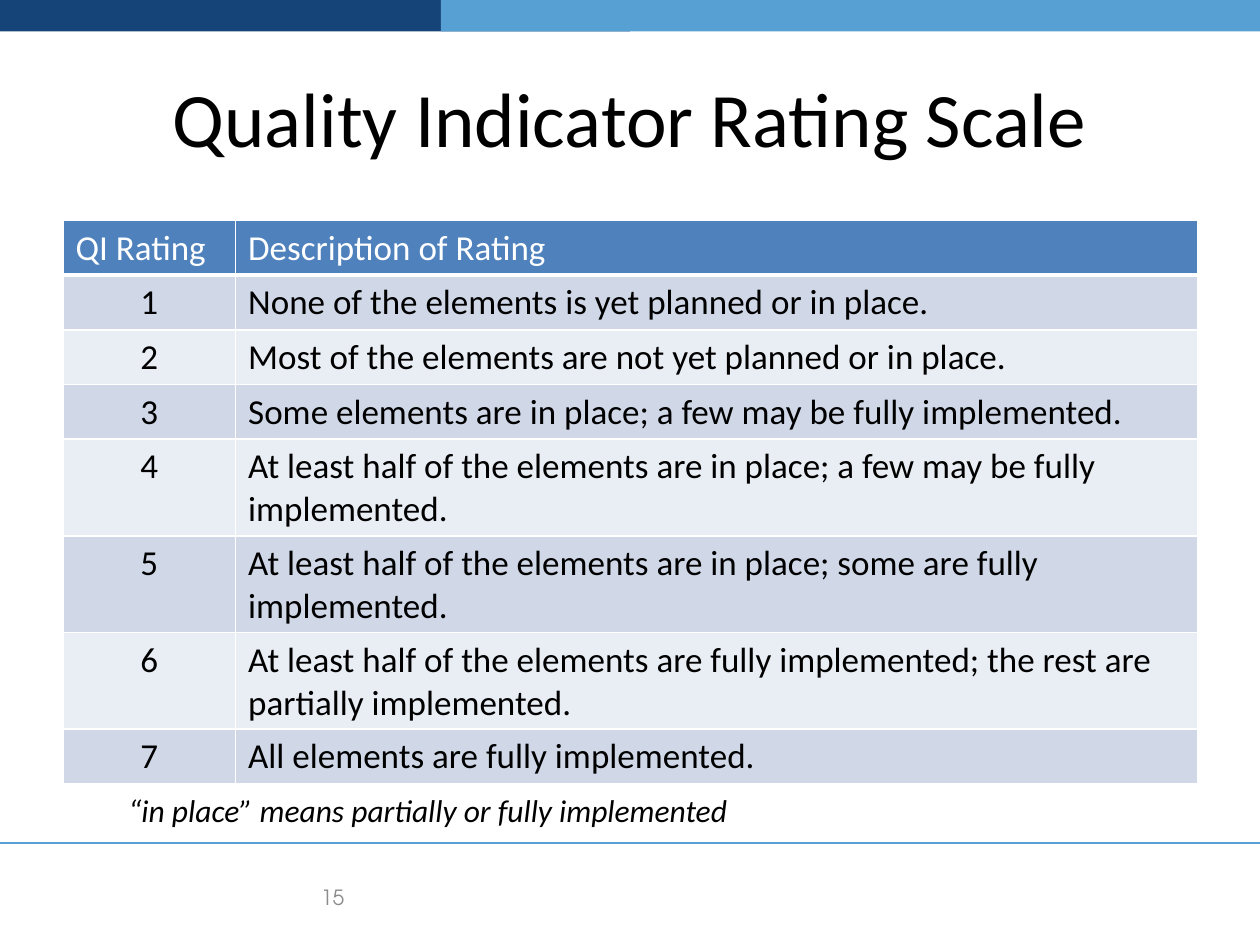
"""Build the Quality Indicator Rating Scale slide."""
import pptx
import pptx.dml.color
import pptx.enum.shapes
import pptx.enum.text
import pptx.oxml.ns
import pptx.util
from lxml import etree

Inches = pptx.util.Inches
ALIGN = pptx.enum.text.PP_ALIGN
ANCHOR = pptx.enum.text.MSO_ANCHOR

RATINGS = [
    "None of the elements is yet planned or in place.",
    "Most of the elements are not yet planned or in place.",
    "Some elements are in place; a few may be fully implemented.",
    "At least half of the elements are in place; a few may be fully implemented.",
    "At least half of the elements are in place; some are fully implemented.",
    "At least half of the elements are fully implemented; the rest are partially implemented.",
    "All elements are fully implemented.",
]
BODY = {"name": "Calibri", "size": pptx.util.Pt(20), "bold": False}
TITLE = {"name": "Calibri", "size": pptx.util.Pt(44)}
NOTE = {"name": "Calibri", "size": pptx.util.Pt(18), "italic": True}
NUMBER = {"name": "TeX Gyre Adventor", "size": pptx.util.Pt(12)}


def set_color(color_format, value):
    """Apply a hex colour to a colour format."""
    color_format.rgb = pptx.dml.color.RGBColor.from_string(value)


def write_text(frame, text, style, color="000000", align=ALIGN.LEFT):
    """Write one formatted paragraph into a text frame."""
    para = frame.paragraphs[0]
    para.alignment = align
    span = para.add_run()
    span.text = text
    for name, value in style.items():
        setattr(span.font, name, value)
    set_color(span.font.color, color)


def add_text(page, area, text, style, color="000000", align=ALIGN.LEFT,
             anchor=ANCHOR.MIDDLE, wrap=True):
    """Add a text box with one paragraph."""
    box = page.shapes.add_textbox(*map(Inches, area))
    box.text_frame.word_wrap = wrap
    box.text_frame.vertical_anchor = anchor
    write_text(box.text_frame, text, style, color, align)


def add_bar(page, area, color):
    """Add a plain rectangle without outline."""
    bar = page.shapes.add_shape(
        pptx.enum.shapes.MSO_SHAPE.RECTANGLE, *map(Inches, area))
    bar.shadow.inherit = False
    bar.fill.solid()
    set_color(bar.fill.fore_color, color)
    bar.line.fill.background()


def add_rule(page, top, color):
    """Add a horizontal line across the page."""
    rule = page.shapes.add_connector(
        pptx.enum.shapes.MSO_CONNECTOR.STRAIGHT,
        Inches(0), Inches(top), Inches(10), Inches(top))
    set_color(rule.line.color, color)
    rule.line.width = pptx.util.Pt(1.5)
    etree.SubElement(rule.element.spPr, pptx.oxml.ns.qn("a:effectLst"))


def set_borders(cell, widths, color="FFFFFF"):
    """Draw the cell borders, given widths in points by side."""
    qn = pptx.oxml.ns.qn
    properties = cell._tc.get_or_add_tcPr()
    for side, width in widths.items():
        line = etree.SubElement(properties, qn("a:ln" + side),
                                w=str(pptx.util.Pt(width)))
        fill = etree.SubElement(line, qn("a:solidFill"))
        etree.SubElement(fill, qn("a:srgbClr"), val=color)


def fill_cell(cell, text, fill, color, align, top=1, bottom=1):
    """Set the borders, fill and text of one table cell."""
    set_borders(cell, {"L": 1, "R": 1, "T": top, "B": bottom})
    cell.fill.solid()
    set_color(cell.fill.fore_color, fill)
    write_text(cell.text_frame, text, BODY, color, align)


def add_rating_table(page):
    """Add the table of ratings and descriptions."""
    row_count = len(RATINGS) + 1
    table = page.shapes.add_table(
        row_count, 2, Inches(0.5), Inches(1.75),
        Inches(9.01), Inches(0.41 * row_count)).table
    for column, width in zip(table.columns, (1.37, 7.64)):
        column.width = Inches(width)
    for index, heading in enumerate(("QI Rating", "Description of Rating")):
        fill_cell(table.cell(0, index), heading, "4F81BD", "FFFFFF",
                  ALIGN.LEFT, bottom=3)
    for rating, description in enumerate(RATINGS, 1):
        fill = "D0D8E8" if rating % 2 else "E9EDF4"
        top = 3 if rating == 1 else 1
        fill_cell(table.cell(rating, 0), str(rating), fill, "000000",
                  ALIGN.CENTER, top)
        fill_cell(table.cell(rating, 1), description, fill, "000000",
                  ALIGN.LEFT, top)


def main():
    """Build and save the deck."""
    deck = pptx.Presentation()
    deck.slide_width, deck.slide_height = Inches(10), Inches(7.5)
    page = deck.slides.add_slide(deck.slide_layouts[6])
    add_bar(page, (0, -1.25, 5, 1.5), "154578")
    add_bar(page, (3.5, -1.25, 6.5, 1.5), "56A0D3")
    add_rule(page, 6.69, "56A0D3")
    add_text(page, (0.5, 0.3, 9, 1.25), "Quality Indicator Rating Scale",
             TITLE, align=ALIGN.CENTER)
    add_text(page, (0.5, 6.92, 2.33, 0.4), "15", NUMBER, "8C8C8C", ALIGN.RIGHT)
    add_rating_table(page)
    add_text(page, (0.92, 6.23, 5.01, 0.4),
             "“in place” means partially or fully implemented", NOTE,
             anchor=ANCHOR.TOP, wrap=False)
    deck.save("out.pptx")


if __name__ == "__main__":
    main()
